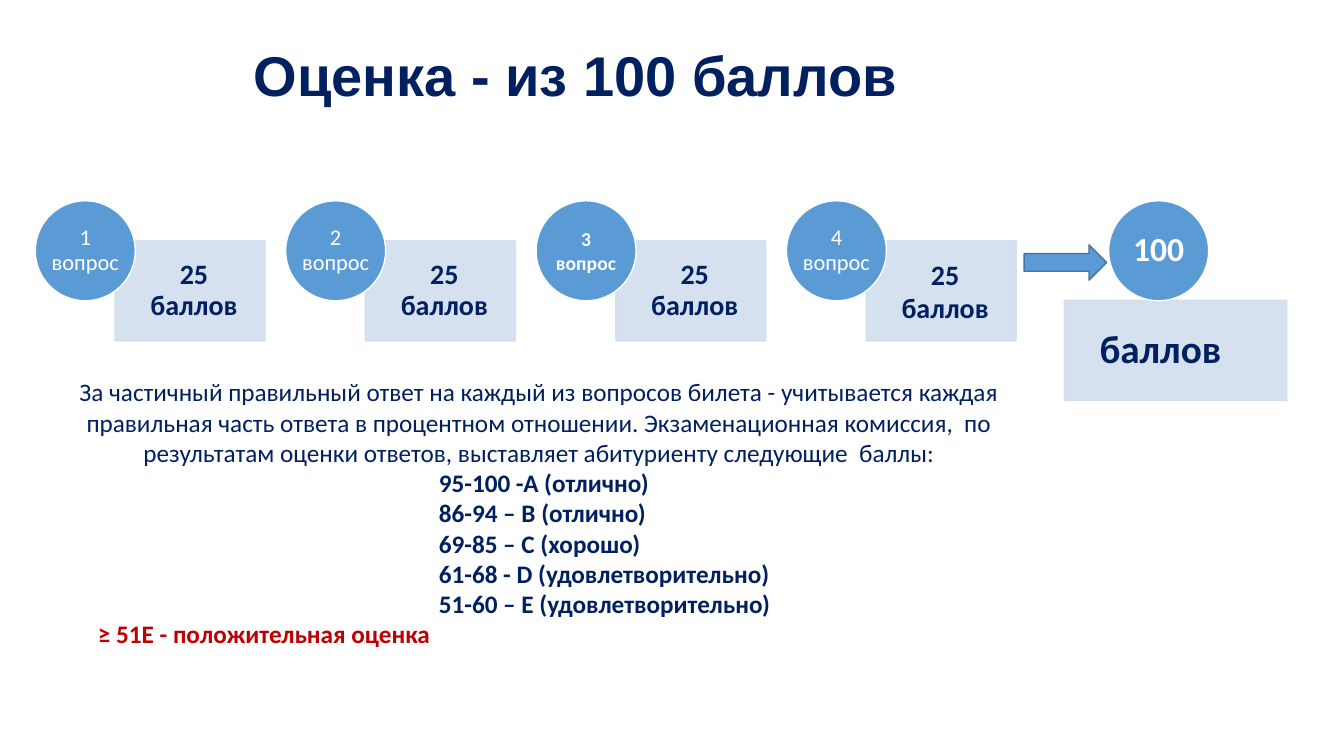
from lxml.etree import SubElement
from pptx import Presentation
from pptx.dml.color import RGBColor
from pptx.enum.shapes import MSO_SHAPE
from pptx.enum.text import MSO_ANCHOR, PP_ALIGN
from pptx.oxml.ns import qn
from pptx.util import Cm, Pt

NAVY = RGBColor(0x00, 0x20, 0x60)
BLUE = RGBColor(0x5B, 0x9B, 0xD5)
DARK_BLUE = RGBColor(0x43, 0x73, 0x9E)
PALE_BLUE = RGBColor(0xD2, 0xDE, 0xEF)
RED = RGBColor(0xC0, 0x00, 0x00)
WHITE = RGBColor(0xFF, 0xFF, 0xFF)

CIRCLE_SIZE = 2.52
CARD_HEIGHT = 2.52
QUESTION_PITCH = 6.31
ROW_TOP = 5.06

INTRO = (
    "За частичный правильный ответ на каждый из вопросов билета - учитывается каждая "
    "правильная часть ответа в процентном отношении. Экзаменационная комиссия,  по "
    "результатам оценки ответов, выставляет абитуриенту следующие  баллы:"
)
GRADES = [
    "95-100 -А (отлично)",
    "86-94 – В (отлично)",
    "69-85 – С (хорошо)",
    "61-68 - D (удовлетворительно)",
    "51-60 – Е (удовлетворительно)",
]
PASS_MARK = "≥ 51Е - положительная оценка"


def format_paragraph(paragraph, size, color, bold=False, align=PP_ALIGN.LEFT,
                     spacing=1.0, font="Calibri", indent=0):
    paragraph.alignment = align
    paragraph.line_spacing = spacing
    if indent:
        properties = paragraph._p.get_or_add_pPr()
        properties.set("marL", str(Cm(indent)))
        properties.set("indent", "0")
    for run in paragraph.runs:
        run.font.name = font
        run.font.size = Pt(size)
        run.font.bold = bold
        run.font.color.rgb = color


def set_text(shape, text, insets, **style):
    frame = shape.text_frame
    frame.word_wrap = True
    frame.vertical_anchor = MSO_ANCHOR.MIDDLE
    frame.margin_left, frame.margin_top, frame.margin_right, frame.margin_bottom = map(Cm, insets)
    frame.text = text
    format_paragraph(frame.paragraphs[0], **style)


def add_filled_shape(slide, kind, left, top, width, height, fill, line):
    shape = slide.shapes.add_shape(kind, Cm(left), Cm(top), Cm(width), Cm(height))
    shape.shadow.inherit = False
    shape.fill.solid()
    shape.fill.fore_color.rgb = fill
    shape.line.color.rgb = line
    shape.line.width = Pt(1)
    return shape


def add_card(slide, left, top, width, text, insets, **style):
    card = add_filled_shape(slide, MSO_SHAPE.RECTANGLE, left, top, width, CARD_HEIGHT,
                            PALE_BLUE, PALE_BLUE)
    for color in list(card._element.spPr.iter(qn("a:srgbClr"))):
        SubElement(color, qn("a:alpha")).set("val", "90000")
    set_text(card, text, insets, color=NAVY, bold=True, **style)


def add_circle(slide, left, top, text, **style):
    circle = add_filled_shape(slide, MSO_SHAPE.OVAL, left, top, CIRCLE_SIZE, CIRCLE_SIZE,
                              BLUE, WHITE)
    set_text(circle, text, (0, 0, 0, 0), color=WHITE, align=PP_ALIGN.CENTER, **style)


def add_title(slide, left, top, width, height):
    title = slide.shapes.add_textbox(Cm(left), Cm(top), Cm(width), Cm(height))
    set_text(title, "Оценка - из 100 баллов", (0.25, 0.13, 0.25, 0.13), size=40,
             color=NAVY, bold=True, spacing=0.9, font="Arial")


def add_question(slide, left, top, number):
    card_spacing = 1.0 if number == 4 else 0.9
    add_card(slide, left + 2.01, top + 1.01, 3.78, "25 баллов", (0.61, 0.41, 0.41, 0.41),
             size=20, align=PP_ALIGN.CENTER, spacing=card_spacing)
    if number == 3:
        circle_style = dict(size=14, bold=True)
    else:
        circle_style = dict(size=16, spacing=0.9)
    add_circle(slide, left, top, f"{number} вопрос", **circle_style)


def add_total(slide, left, top):
    add_card(slide, left, top + 2.51, 5.61, "баллов", (0.89, 0.56, 0.56, 0.56),
             size=28, spacing=0.9)
    add_circle(slide, left + 1.12, top, "100", size=24, bold=True, spacing=0.9)
    add_filled_shape(slide, MSO_SHAPE.RIGHT_ARROW, left - 1.01, top + 1.11, 2.08, 0.89,
                     BLUE, DARK_BLUE)


def add_grading_scale(slide, left, top, width, height):
    box = slide.shapes.add_textbox(Cm(left), Cm(top), Cm(width), Cm(height))
    frame = box.text_frame
    frame.word_wrap = True
    frame.text = "\n".join([INTRO, *GRADES, PASS_MARK])
    intro, *grades, pass_mark = frame.paragraphs
    format_paragraph(intro, 18, NAVY, align=PP_ALIGN.CENTER)
    for grade in grades:
        format_paragraph(grade, 18, NAVY, bold=True, indent=9.46)
    format_paragraph(pass_mark, 18, RED, bold=True, indent=0.87)


def main():
    presentation = Presentation()
    presentation.slide_width = Cm(33.87)
    presentation.slide_height = Cm(19.05)
    slide = presentation.slides.add_slide(presentation.slide_layouts[6])
    add_title(slide, 6.15, 1.02, 21.74, 1.93)
    for index in range(4):
        add_question(slide, 0.89 + index * QUESTION_PITCH, ROW_TOP, index + 1)
    add_total(slide, 26.82, ROW_TOP)
    add_grading_scale(slide, 1.35, 9.37, 24.46, 8.71)
    presentation.save("out.pptx")


if __name__ == "__main__":
    main()
